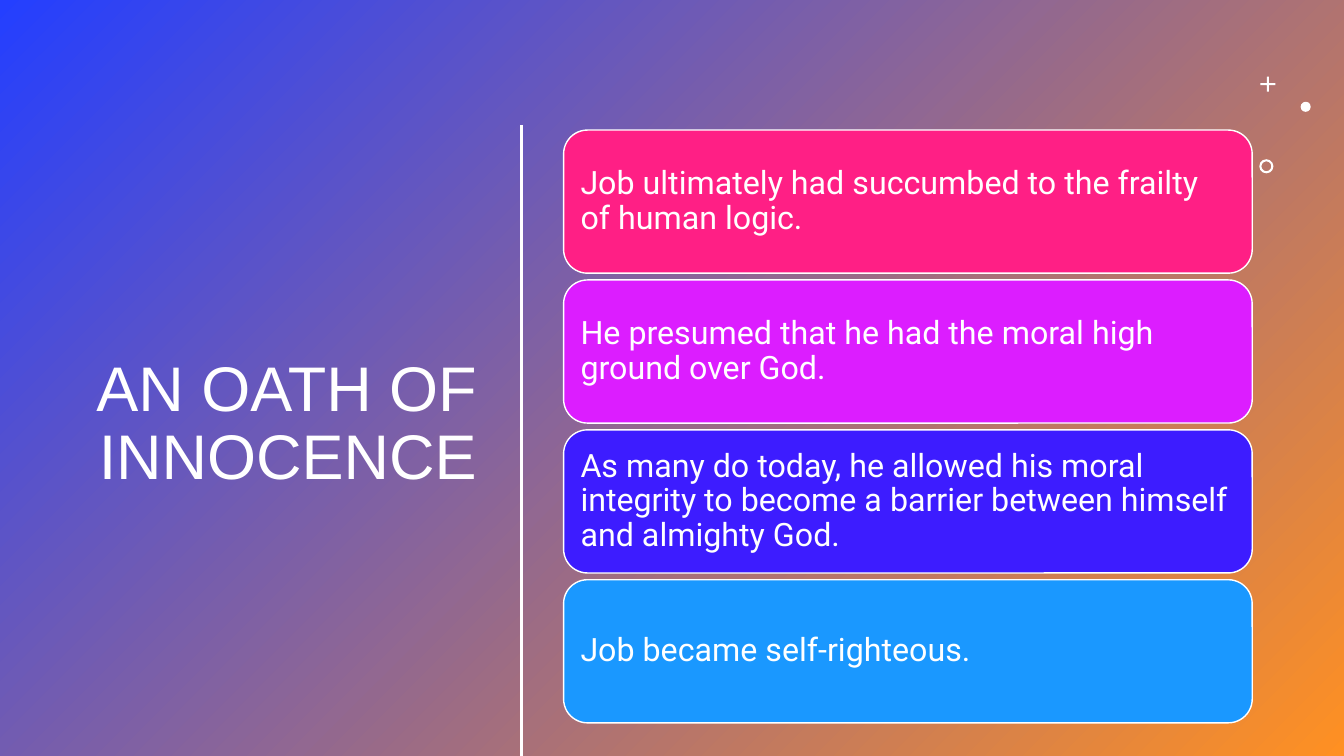
from lxml import etree
from pptx import Presentation
from pptx import util as u
from pptx.dml.color import RGBColor
from pptx.enum import shapes, text
from pptx.oxml.ns import qn

WHITE = "FFFFFF"


def color(value):
    return RGBColor.from_string(value)


def style_text(frame, font, size, align):
    frame.word_wrap = True
    frame.auto_size = text.MSO_AUTO_SIZE.NONE
    frame.vertical_anchor = text.MSO_ANCHOR.MIDDLE
    for para in frame.paragraphs:
        para.alignment = align
        para.line_spacing = 0.9
        for span in para.runs:
            span.font.name = font
            span.font.size = u.Pt(size)
            span.font.color.rgb = color(WHITE)


deck = Presentation()
deck.slide_width = u.Inches(13.33)
deck.slide_height = u.Inches(7.5)
page = deck.slides.add_slide(deck.slide_layouts[5])

# Title
title = page.shapes.title
title.left, title.top = u.Inches(0.52), u.Inches(1.16)
title.width, title.height = u.Inches(4.31), u.Inches(6.11)
title.text_frame.text = "AN OATH OF INNOCENCE"
style_text(title.text_frame, "Arial", 45, text.PP_ALIGN.RIGHT)

# Gradient backdrop, placed behind the title
backdrop = page.shapes.add_shape(
    shapes.MSO_SHAPE.RECTANGLE, 0, 0, deck.slide_width, deck.slide_height)
backdrop.shadow.inherit = False
backdrop.line.fill.background()
backdrop.fill.gradient()
backdrop.fill.gradient_angle = 315
for stop, value in zip(backdrop.fill.gradient_stops, ("243FFF", "FF9022")):
    stop.color.rgb = color(value)
title.element.addprevious(backdrop.element)

# Small ornaments: plus, dot and ring
ornaments = [
    (shapes.MSO_SHAPE.CROSS, 12.5, 0.76, 0.15, 0.43),
    (shapes.MSO_SHAPE.OVAL, 12.9, 1.01, 0.1, None),
    (shapes.MSO_SHAPE.DONUT, 12.49, 1.58, 0.14, 0.15),
]
for kind, left, top, size, adjustment in ornaments:
    ornament = page.shapes.add_shape(
        kind, u.Inches(left), u.Inches(top), u.Inches(size), u.Inches(size))
    ornament.shadow.inherit = False
    ornament.fill.solid()
    ornament.fill.fore_color.rgb = color(WHITE)
    ornament.line.fill.background()
    if adjustment is not None:
        ornament.adjustments[0] = adjustment

# Vertical divider
divider = page.shapes.add_connector(
    shapes.MSO_CONNECTOR.STRAIGHT,
    u.Inches(5.17), u.Inches(1.24), u.Inches(5.17), u.Inches(7.5))
divider.line.color.rgb = color(WHITE)
divider.line.width = u.Pt(2)
etree.SubElement(divider.element.spPr, qn("a:effectLst"))

# Statement cards
cards = [
    ("FF1F85", "Job ultimately had succumbed to the frailty of human logic."),
    ("DC1DFF", "He presumed that he had the moral high ground over God."),
    ("3D1CFF", "As many do today, he allowed his moral integrity to become "
               "a barrier between himself and almighty God."),
    ("1A98FF", "Job became self-righteous."),
]
for row, (fill, statement) in enumerate(cards):
    card = page.shapes.add_shape(
        shapes.MSO_SHAPE.ROUNDED_RECTANGLE,
        u.Inches(5.59), u.Inches(1.29 + row * 1.487),
        u.Inches(6.83), u.Inches(1.42))
    card.shadow.inherit = False
    card.fill.solid()
    card.fill.fore_color.rgb = color(fill)
    card.line.color.rgb = color(WHITE)
    card.line.width = u.Pt(1)
    frame = card.text_frame
    frame.text = statement
    frame.margin_left = frame.margin_right = u.Inches(0.1)
    frame.margin_top = frame.margin_bottom = u.Inches(0.1)
    style_text(frame, "Roboto", 23, text.PP_ALIGN.LEFT)

deck.save("out.pptx")
